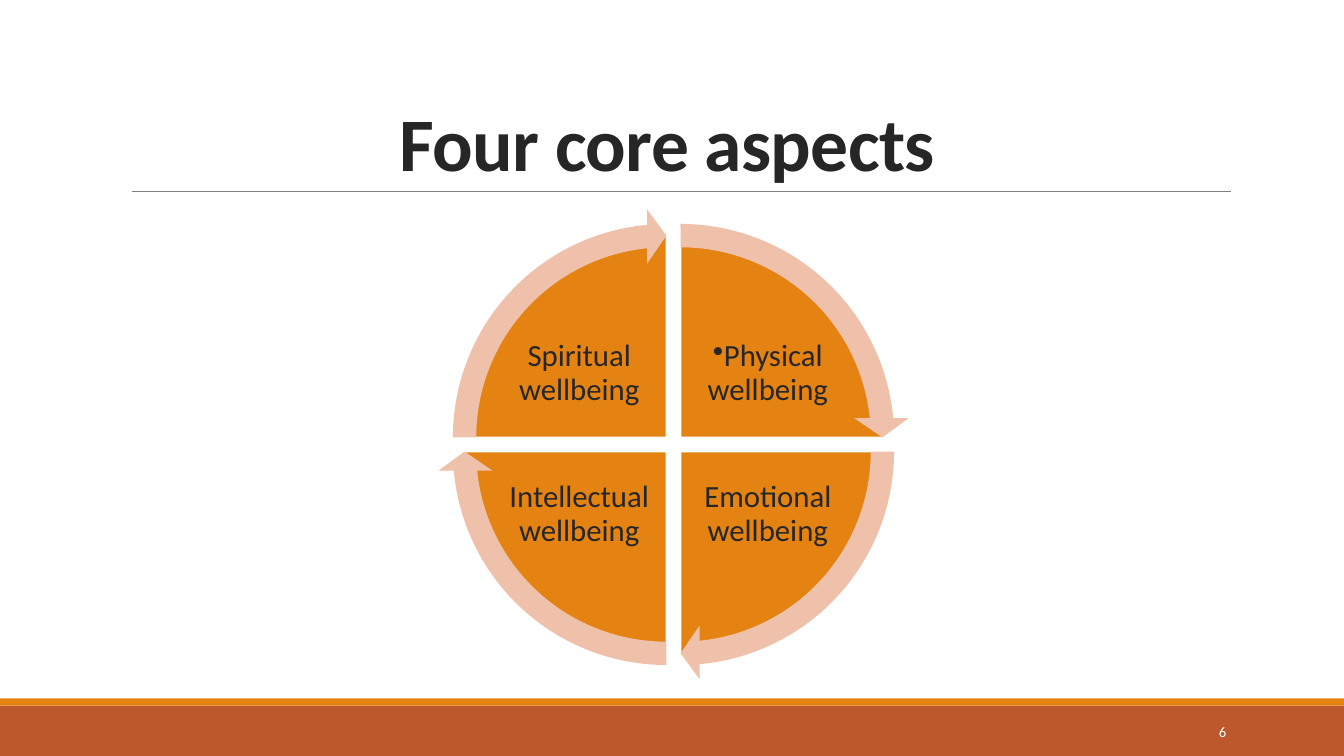
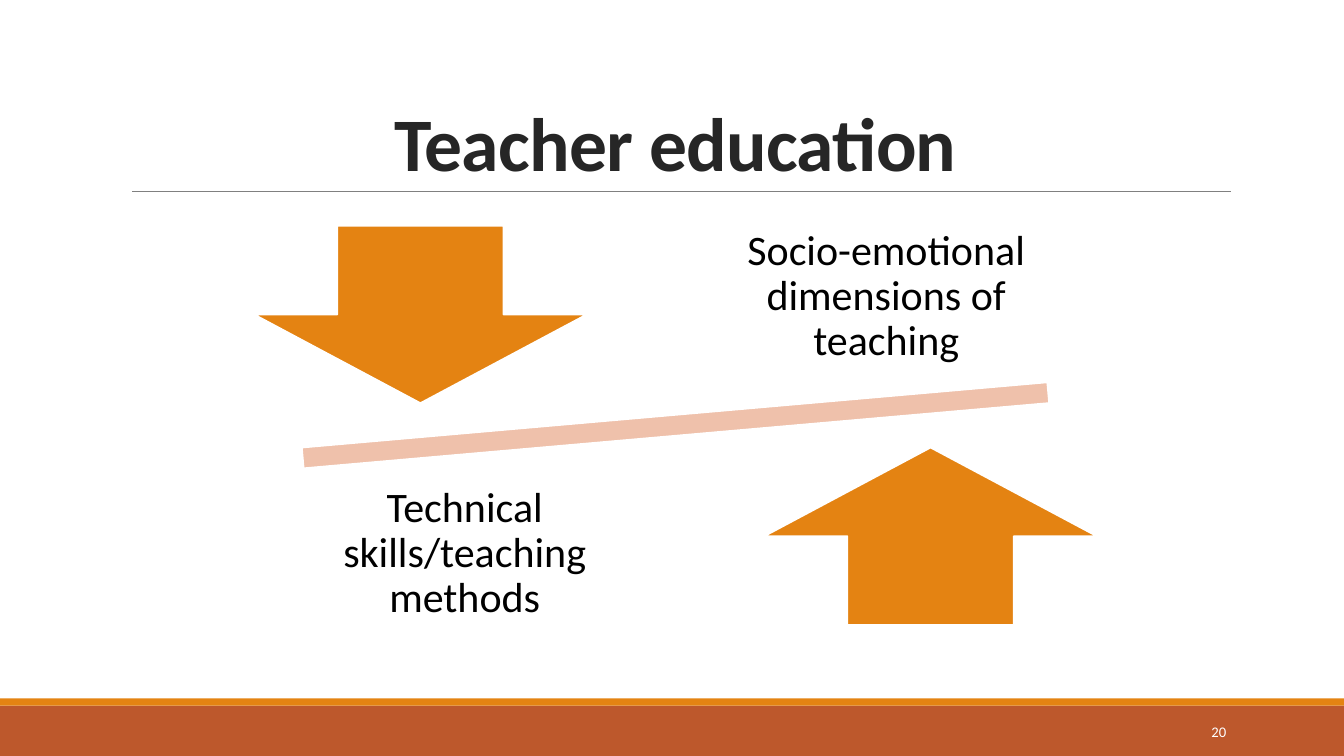
import pptx
import pptx.util
import pptx.oxml.ns
from lxml import etree
from pptx.dml.color import RGBColor
from pptx.enum.shapes import MSO_CONNECTOR, MSO_SHAPE
from pptx.enum.text import MSO_ANCHOR, PP_ALIGN

Inches = pptx.util.Inches
Pt = pptx.util.Pt
qn = pptx.oxml.ns.qn

RUST = RGBColor(0xBD, 0x58, 0x2C)
ORANGE = RGBColor(0xE4, 0x83, 0x12)
PEACH = RGBColor(0xEF, 0xC1, 0xAB)
GRAY = RGBColor(0x80, 0x80, 0x80)
DARK = RGBColor(0x26, 0x26, 0x26)
BLACK = RGBColor(0, 0, 0)
WHITE = RGBColor(0xFF, 0xFF, 0xFF)
FONT = "Calibri"
WIDE, HIGH = 13.33, 7.5
TURN, QUARTER = 216, 54  # angles in units of 5/3 degree, as adjustments use


def add_shape(slide, kind, box, fill, edge=False, adjust=()):
    shape = slide.shapes.add_shape(kind, *map(Inches, box))
    shape.shadow.inherit = False
    shape.fill.solid()
    shape.fill.fore_color.rgb = fill
    if edge:
        shape.line.color.rgb = WHITE
        shape.line.width = Pt(1.25)
    else:
        shape.line.fill.background()
    for index, value in enumerate(adjust):
        shape.adjustments[index] = value
    return shape


def add_text(slide, text, box, size, color, align=PP_ALIGN.CENTER,
             anchor=MSO_ANCHOR.MIDDLE, spacing=1.0, inset=None):
    """Place one paragraph in a box and return the paragraph."""
    frame = slide.shapes.add_textbox(*map(Inches, box)).text_frame
    frame.word_wrap = True
    frame.vertical_anchor = anchor
    if inset is not None:
        frame.margin_left = frame.margin_right = Inches(inset)
        frame.margin_top = frame.margin_bottom = Inches(inset)
    para = frame.paragraphs[0]
    para.text = text
    para.alignment = align
    para.line_spacing = spacing
    font = para.runs[0].font
    font.name = FONT
    font.size = Pt(size)
    font.color.rgb = color
    return para


def add_bullet(para):
    props = para._p.get_or_add_pPr()
    props.set("marL", "0")
    props.set("indent", "0")
    etree.SubElement(props, qn("a:buChar")).set("char", "•")


def add_frame(deck, title, number):
    """Add a slide with the bands, rule, title and page number."""
    slide = deck.slides.add_slide(deck.slide_layouts[6])
    add_shape(slide, MSO_SHAPE.RECTANGLE, (0, 7, WIDE, 0.5), RUST)
    add_shape(slide, MSO_SHAPE.RECTANGLE, (0, 6.93, WIDE, 0.07), ORANGE)
    rule = slide.shapes.add_connector(
        MSO_CONNECTOR.STRAIGHT, *map(Inches, (1.31, 1.9, 12.21, 1.9)))
    rule.line.color.rgb = GRAY
    rule.line.width = Pt(0.5)
    etree.SubElement(rule.element.spPr, qn("a:effectLst"))

    para = add_text(slide, title, (1.2, 0.31, 11, 1.59), 54, DARK,
                    anchor=MSO_ANCHOR.BOTTOM, spacing=0.85)
    font = para.runs[0].font
    font.bold = True
    para.runs[0]._r.get_or_add_rPr().set("spc", "-50")
    add_text(slide, str(number), (10.83, 7.06, 1.43, 0.4), 10.5, WHITE,
             align=PP_ALIGN.RIGHT)
    return slide


def add_cycle(slide, labels, left, top):
    """Draw four quarters clockwise from the top right, ringed by arrows."""
    size, gap, rim = 4.04, 0.14, 0.25
    arrows = []
    for index, label in enumerate(labels):
        east, south = index in (0, 1), index in (1, 2)
        x, y = left + gap * east, top + gap * south
        start = (TURN - QUARTER + QUARTER * index) % TURN
        end = (start + QUARTER) % TURN
        add_shape(slide, MSO_SHAPE.PIE, (x, y, size, size), ORANGE, True,
                  (start, end))
        box = (left + (2.28 if east else 0.41),
               top + (2.23 if south else 0.83), 1.49, 1.11)
        para = add_text(slide, label, box, 22, DARK, spacing=0.9, inset=0.03)
        if index == 0:
            add_bullet(para)
        ring = (x - rim, y - rim, size + 2 * rim, size + 2 * rim)
        arrows.append((ring, (0.051, 3.275, (end - 3.275) % TURN, start, 0.059)))
    for ring, adjust in arrows:
        add_shape(slide, MSO_SHAPE.CIRCULAR_ARROW, ring, PEACH, adjust=adjust)


def add_scale(slide, upper, lower, left, top):
    """Draw a tilted bar with an arrow and a label on each side."""
    bar = add_shape(slide, MSO_SHAPE.MATH_MINUS,
                    (left, top + 1.76, 10.1, 0.88), PEACH, True)
    bar.rotation = 355
    sides = (
        (MSO_SHAPE.DOWN_ARROW, 0.87, 0.22, upper, 5.38, 0),
        (MSO_SHAPE.UP_ARROW, 5.93, 2.42, lower, 1.2, 2.55),
    )
    for kind, x, y, label, text_x, text_y in sides:
        add_shape(slide, kind, (left + x, top + y, 3.3, 1.76), ORANGE, True)
        add_text(slide, label, (left + text_x, top + text_y, 3.52, 1.85),
                 30, BLACK, spacing=0.9, inset=0.23)


def main():
    deck = pptx.Presentation()
    deck.slide_width, deck.slide_height = Inches(WIDE), Inches(HIGH)

    slide = add_frame(deck, "Four core aspects ", 6)
    add_cycle(slide, ("Physical wellbeing", "Emotional wellbeing",
                      "Intellectual wellbeing", "Spiritual wellbeing"),
              4.59, 2.32)

    slide = add_frame(deck, "Teacher education", 20)
    add_scale(slide, "Socio-emotional dimensions of teaching",
              "Technical skills/teaching methods", 1.65, 2.02)

    deck.save("out.pptx")


if __name__ == "__main__":
    main()
